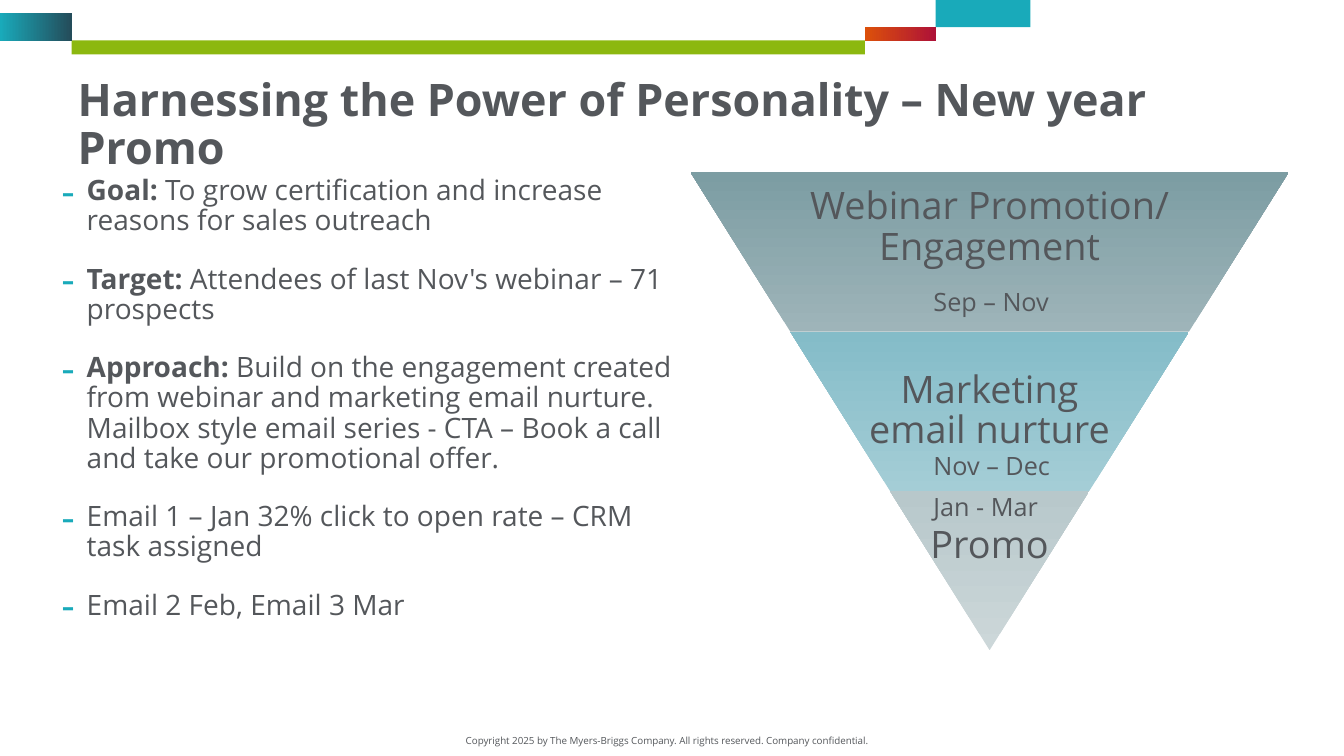
from lxml import etree
from pptx import Presentation
from pptx.dml.color import RGBColor
from pptx.enum.shapes import MSO_SHAPE
from pptx.enum.text import MSO_ANCHOR, MSO_AUTO_SIZE, PP_ALIGN
from pptx.oxml.ns import qn
from pptx.util import Inches, Pt

RECTANGLE, TRAPEZOID = MSO_SHAPE.RECTANGLE, MSO_SHAPE.TRAPEZOID
LEFT, CENTER = PP_ALIGN.LEFT, PP_ALIGN.CENTER
TOP, MIDDLE = MSO_ANCHOR.TOP, MSO_ANCHOR.MIDDLE
NO_FIT = MSO_AUTO_SIZE.NONE

FONT = "Open Sans"
GREY = RGBColor(0x54, 0x57, 0x5B)
TEAL = RGBColor(0x19, 0xAA, 0xBA)
NAVY = RGBColor(0x24, 0x4C, 0x5A)
GREEN = RGBColor(0x8C, 0xB8, 0x0F)
ORANGE = RGBColor(0xDC, 0x50, 0x0A)
CRIMSON = RGBColor(0xAE, 0x12, 0x37)

BARS = [
    ((0.71, 0.4, 7.87, 0.14), [GREEN]),
    ((0, 0.13, 0.71, 0.28), [TEAL, NAVY]),
    ((9.28, -0.01, 0.94, 0.28), [TEAL]),
    ((8.58, 0.27, 0.7, 0.14), [ORANGE, CRIMSON]),
]
POINTS = [
    ("Goal:", " To grow certification\u00a0and increase reasons for sales outreach"),
    ("Target:", " Attendees of last Nov's webinar – 71 prospects"),
    ("Approach:", " Build on the engagement created from webinar and marketing email "
     "nurture. Mailbox style email series - CTA – Book a call and take\u00a0our "
     "promotional offer."),
    ("", "Email 1 – Jan 32% click to open rate –\u00a0CRM task assigned"),
    ("", "Email 2 Feb, Email 3 Mar"),
]
STAGES = [
    ("Webinar Promotion/ Engagement", 3.86, 0.48, "Sep – Nov", 1.08,
     [RGBColor(0x9E, 0xB4, 0xB9), RGBColor(0x7C, 0x9D, 0xA3)]),
    ("Marketing email nurture", 2.57, 0, "Nov – Dec", 1.13,
     [RGBColor(0xA4, 0xCD, 0xD6), RGBColor(0x84, 0xBC, 0xC8)]),
    ("Promo", 1.98, 0.48, "Jan - Mar", -0.04,
     [RGBColor(0xCC, 0xD7, 0xD9), RGBColor(0xB8, 0xC8, 0xCB)]),
]


def place(shape, box):
    """Move a shape to a box given in inches."""
    shape.left, shape.top, shape.width, shape.height = map(Inches, box)


def style(para, size, align=LEFT, spacing=None):
    """Set the alignment, line spacing and font of a paragraph."""
    para.alignment = align
    para.line_spacing = spacing
    para.font.name, para.font.size = FONT, Pt(size)
    para.font.color.rgb = GREY


def add_filled(slide, kind, box, colors, angle=0):
    """Add a borderless shape with a solid or two-colour gradient fill."""
    shape = slide.shapes.add_shape(kind, *map(Inches, box))
    shape.shadow.inherit = False
    shape.line.fill.background()
    if len(colors) == 1:
        shape.fill.solid()
        shape.fill.fore_color.rgb = colors[0]
    else:
        shape.fill.gradient()
        shape.fill.gradient_angle = angle
        for stop, color in zip(shape.fill.gradient_stops, colors):
            stop.color.rgb = color
    return shape


def add_text(slide, box, text, size, align=LEFT, spacing=None):
    """Add a wrapping text box with one paragraph."""
    frame = slide.shapes.add_textbox(*map(Inches, box)).text_frame
    frame.word_wrap = True
    frame.text = text
    style(frame.paragraphs[0], size, align, spacing)
    return frame


def add_bullet(para):
    """Give a paragraph a hanging teal dash."""
    props = para._p.get_or_add_pPr()
    props.set("marL", str(Inches(0.25)))
    props.set("indent", str(-Inches(0.25)))
    color = etree.SubElement(props, qn("a:buClr"))
    etree.SubElement(color, qn("a:srgbClr"), val=str(TEAL))
    etree.SubElement(props, qn("a:buSzPct"), val="150000")
    etree.SubElement(props, qn("a:buFont"), typeface=FONT)
    etree.SubElement(props, qn("a:buChar"), char="-")


def fill_title(title, box):
    """Write the slide title."""
    place(title, box)
    frame = title.text_frame
    frame.text = "Harnessing the Power of Personality – New year Promo"
    frame.auto_size, frame.vertical_anchor = NO_FIT, TOP
    style(frame.paragraphs[0], 32, spacing=0.9)
    frame.paragraphs[0].font.bold = True


def fill_points(body, box):
    """Write the bulleted campaign points with bold lead words."""
    place(body, box)
    frame = body.text_frame
    frame.auto_size = NO_FIT
    for index, (lead, rest) in enumerate(POINTS):
        para = frame.add_paragraph() if index else frame.paragraphs[0]
        add_bullet(para)
        para.space_before = Pt(20 if index else 0)
        style(para, 20, spacing=0.9)
        if lead:
            span = para.add_run()
            span.text, span.font.bold = lead, True
        para.add_run().text = rest


def add_funnel(slide, box):
    """Stack the funnel stages, each narrower than the one above."""
    left, top, width, height = box
    count = len(STAGES)
    step, inset = height / count, width / count / 2
    for index, (name, text_width, lift, dates, drop, colors) in enumerate(STAGES):
        y = top + index * step
        band_width = width - 2 * inset * index
        band = add_filled(slide, TRAPEZOID,
                          (left + inset * index, y, band_width, step), colors, 270)
        band.rotation = 180
        band.adjustments[0] = inset / step
        center = left + width / 2
        frame = add_text(slide, (center - text_width / 2, y, text_width, step),
                         name, 27, CENTER, 0.9)
        frame.vertical_anchor = MIDDLE
        frame.margin_left = frame.margin_right = frame.margin_top = Inches(0.04)
        frame.margin_bottom = Inches(0.04 + lift)
        add_text(slide, (9.16, y + drop, 2.69, 0.4), dates, 18)


def main():
    """Build and save the deck."""
    deck = Presentation()
    deck.slide_width, deck.slide_height = Inches(13.33), Inches(7.5)
    page = deck.slides.add_slide(deck.slide_layouts[1])
    for box, colors in BARS:
        add_filled(page, RECTANGLE, box, colors)
    add_text(page, (4.46, 7.24, 4.31, 0.22),
             "Copyright 2025 by The Myers-Briggs Company. All rights reserved. "
             "Company confidential.", 7, CENTER)
    fill_title(page.shapes.title, (0.67, 0.72, 12.32, 0.99))
    fill_points(page.placeholders[1], (0.51, 1.7, 6.34, 4.56))
    add_funnel(page, (6.85, 1.71, 5.93, 4.74))
    deck.save("out.pptx")


if __name__ == "__main__":
    main()
